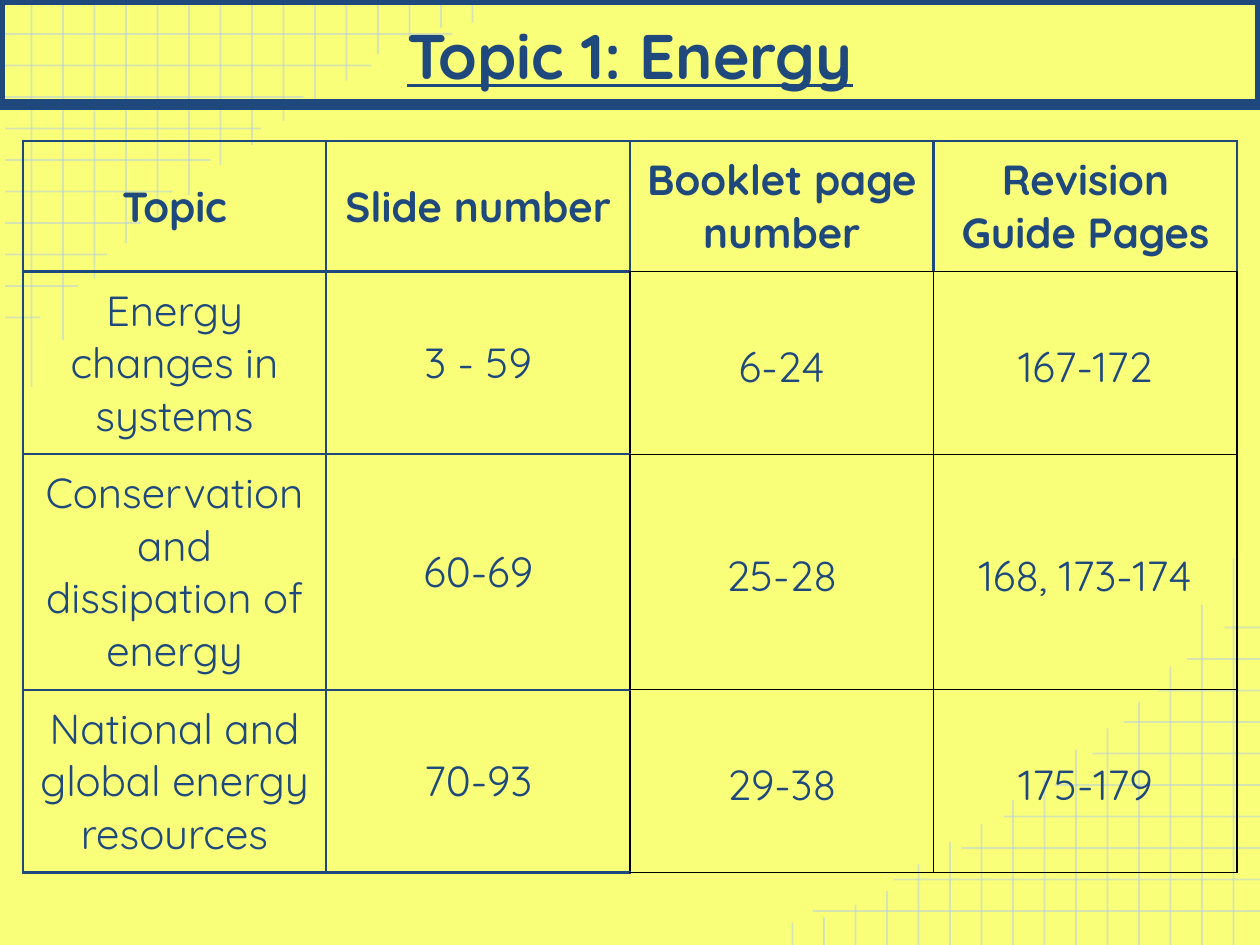
import lxml.etree
import pptx
import pptx.dml.color
import pptx.enum.shapes
import pptx.enum.text
import pptx.oxml.ns
import pptx.util

Inches = pptx.util.Inches
Pt = pptx.util.Pt
qn = pptx.oxml.ns.qn

YELLOW = pptx.dml.color.RGBColor(0xFA, 0xFF, 0x79)
NAVY = pptx.dml.color.RGBColor(0x1F, 0x49, 0x7D)
PALE_BLUE = pptx.dml.color.RGBColor(0xB7, 0xCC, 0xE4)
BLACK = pptx.dml.color.RGBColor(0, 0, 0)
FONT = "Quicksand"

GRID_STEP = 0.25
ROW_ENDS = [3.55, 2.91, 2.37, 2.03, 1.63, 1.33, 1.08, 0.81, 0.58, 0.28]
COLUMN_ENDS = [3.07, 2.7, 2.21, 1.93, 1.72, 1.55, 1.31, 1.15,
               0.96, 0.82, 0.64, 0.43, 0.32, 0.22, 0.18]

ROWS = [
    ["Topic", "Slide number", "Booklet page number", "Revision Guide Pages"],
    ["Energy changes in systems", "3 - 59", "6-24", "167-172"],
    ["Conservation and dissipation of energy", "60-69", "25-28", "168, 173-174"],
    ["National and global energy resources", "70-93", "29-38", "175-179"],
]
ROW_HEIGHTS = [0.69, 1.2, 1.2, 1.2]


def style_text(para, size, bold, underline=None):
    """Centre a paragraph and format its runs."""
    para.alignment = pptx.enum.text.PP_ALIGN.CENTER
    for span in para.runs:
        span.font.name = FONT
        span.font.size = Pt(size)
        span.font.bold = bold
        span.font.underline = underline
        span.font.color.rgb = NAVY


def add_grid_line(group, start, end):
    """Draw one translucent grid line between two points in inches."""
    ends = [Inches(value) for value in (*start, *end)]
    line = group.shapes.add_connector(
        pptx.enum.shapes.MSO_CONNECTOR.STRAIGHT, *ends)
    line.line.color.rgb = PALE_BLUE
    line.line.width = Pt(1)
    properties = line._element.spPr
    color = properties.find(".//" + qn("a:srgbClr"))
    lxml.etree.SubElement(color, qn("a:alpha"), val="53000")
    lxml.etree.SubElement(properties, qn("a:effectLst"))


def add_corner_grid(page, corner_x, corner_y, direction):
    """Draw a fading grid from a corner; direction -1 turns it half round."""
    group = page.shapes.add_group_shape()

    def point(x, y):
        return corner_x + direction * x, corner_y + direction * y

    for index, length in enumerate(ROW_ENDS):
        y = 0.27 + GRID_STEP * index
        add_grid_line(group, point(0, y), point(length, y))
    for index, length in enumerate(COLUMN_ENDS):
        x = 0.21 + GRID_STEP * index
        add_grid_line(group, point(x, length), point(x, 0))


def place_title(page, left, top, width, height):
    """Format the title as an outlined banner in front of the grids."""
    title = page.shapes.title
    page.shapes._spTree.append(title._element)
    title.left, title.top = Inches(left), Inches(top)
    title.width, title.height = Inches(width), Inches(height)
    title.line.color.rgb = NAVY
    title.line.width = Pt(6)
    frame = title.text_frame
    frame.text = "Topic 1: Energy"
    frame.vertical_anchor = pptx.enum.text.MSO_ANCHOR.BOTTOM
    frame.margin_left = frame.margin_right = Inches(0.1)
    frame.margin_top = frame.margin_bottom = Inches(0.1)
    style_text(frame.paragraphs[0], 36, True, True)


def set_borders(cell, row, column):
    """Give a cell navy edges, or thin black ones around the page numbers."""
    black_sides = ""
    if row > 0 and column > 1:
        black_sides = "LRTB"
    elif row > 0 and column == 1:
        black_sides = "R"
    elif column > 1:
        black_sides = "B"
    properties = cell._tc.get_or_add_tcPr()
    for side in "LRTB":
        color, width = (BLACK, 1) if side in black_sides else (NAVY, 1.5)
        edge = lxml.etree.SubElement(
            properties, qn("a:ln" + side), w=str(Pt(width)))
        fill = lxml.etree.SubElement(edge, qn("a:solidFill"))
        lxml.etree.SubElement(fill, qn("a:srgbClr"), val=str(color))


def fill_cell(cell, text, row, column):
    """Write and format one table cell."""
    is_reference = row > 0 and column > 1
    cell.text = text
    cell.margin_left = cell.margin_right = Inches(0.07 if is_reference else 0.1)
    cell.margin_top = cell.margin_bottom = Inches(0.1)
    anchors = pptx.enum.text.MSO_ANCHOR
    is_topic = row > 0 and column == 0
    cell.vertical_anchor = anchors.TOP if is_topic else anchors.MIDDLE
    para = cell.text_frame.paragraphs[0]
    if is_reference:
        para.line_spacing = 1.15
    style_text(para, 24, row == 0)
    set_borders(cell, row, column)
    cell.fill.background()


def add_topic_table(page, left, top, width, height):
    """Add the table of topics and where to find them."""
    frame = page.shapes.add_table(
        len(ROWS), len(ROWS[0]),
        Inches(left), Inches(top), Inches(width), Inches(height))
    table = frame.table
    table.first_row = table.horz_banding = False
    for row, texts in enumerate(ROWS):
        table.rows[row].height = Inches(ROW_HEIGHTS[row])
        for column, text in enumerate(texts):
            fill_cell(table.cell(row, column), text, row, column)
    frame.height = Inches(height)


def main():
    """Build and save the deck."""
    deck = pptx.Presentation()
    deck.slide_width, deck.slide_height = Inches(10), Inches(7.5)
    page = deck.slides.add_slide(deck.slide_layouts[5])
    page.background.fill.solid()
    page.background.fill.fore_color.rgb = YELLOW
    add_corner_grid(page, 0.04, 0, 1)
    add_corner_grid(page, 10, 7.5, -1)
    place_title(page, 0, 0, 10, 0.83)
    add_topic_table(page, 0.18, 1.12, 9.64, 6)
    deck.save("out.pptx")


if __name__ == "__main__":
    main()
